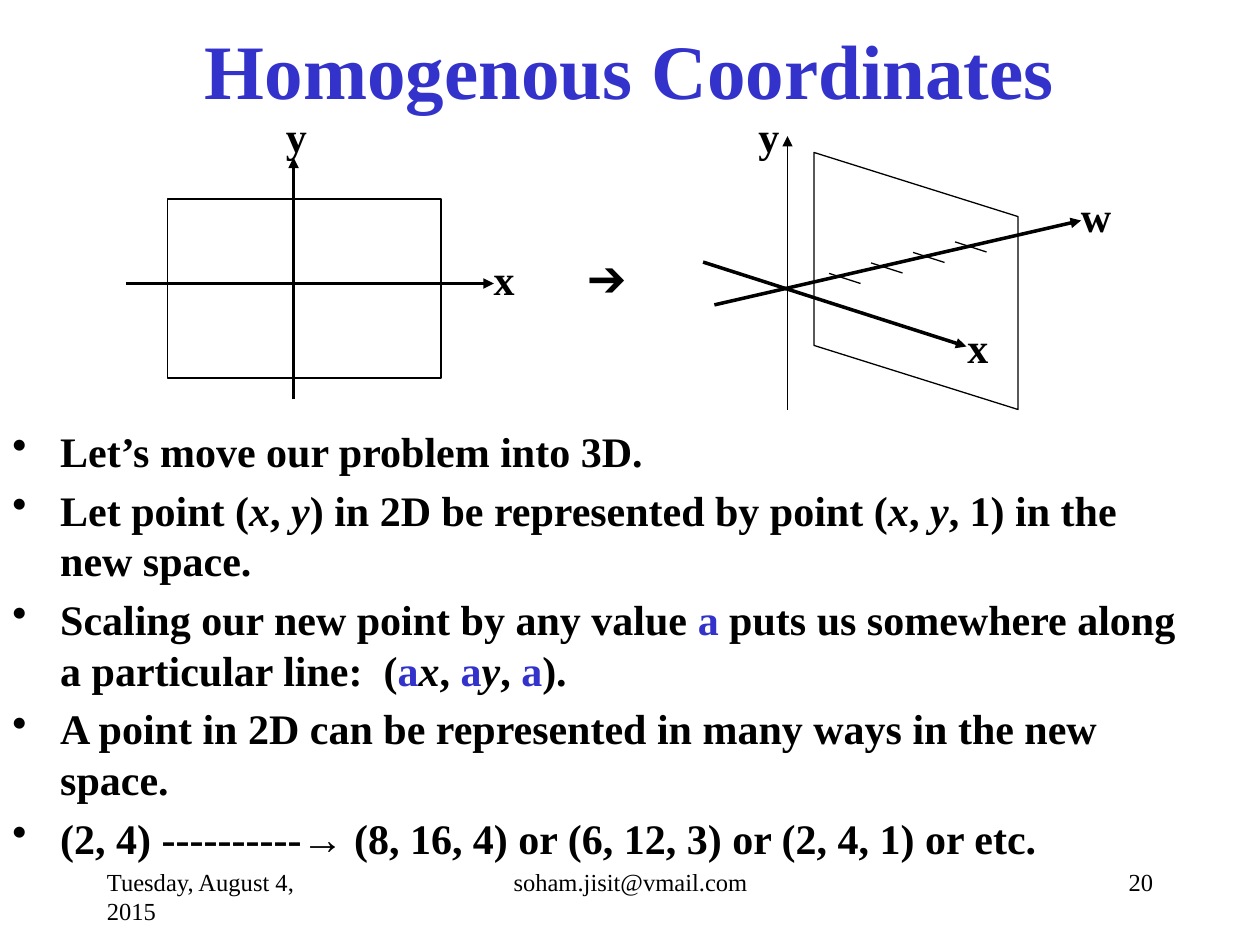
from lxml import etree
from pptx import Presentation
from pptx.dml.color import RGBColor
from pptx.enum.shapes import MSO_CONNECTOR, MSO_SHAPE
from pptx.enum.text import MSO_ANCHOR, PP_ALIGN
from pptx.oxml.ns import qn
from pptx.util import Inches, Pt

HUES = {"ink": "000000", "blue": "3333CC"}
FONT = "Times New Roman"

deck = Presentation()
deck.slide_width, deck.slide_height = Inches(10), Inches(7.5)
slide = deck.slides.add_slide(deck.slide_layouts[6])


def add_text(text, box, size, bold=True, hue="ink", align=PP_ALIGN.LEFT, wrap=True):
    """Add a text box; between bars, a is blue and other words are italic."""
    frame = slide.shapes.add_textbox(*[Inches(n) for n in box]).text_frame
    frame.word_wrap = wrap
    frame.text = text
    for para in frame.paragraphs:
        para.alignment = align
        parts = para.text.split("|")
        para.text = parts[0]
        for part in parts[1:]:
            para.add_run().text = part
        for i, run in enumerate(para.runs):
            mark = i % 2 == 1
            tint = "blue" if mark and run.text == "a" else hue
            run.font.name, run.font.size = FONT, Pt(size)
            run.font.bold = bold
            run.font.italic = mark and run.text != "a"
            run.font.color.rgb = RGBColor.from_string(HUES[tint])
    return frame


def add_line(x1, y1, x2, y2, width=0.75, arrow=False):
    line = slide.shapes.add_connector(
        MSO_CONNECTOR.STRAIGHT, Inches(x1), Inches(y1), Inches(x2), Inches(y2))
    line.line.width = Pt(width)
    line.line.color.rgb = RGBColor.from_string(HUES["ink"])
    if arrow:
        etree.SubElement(line.line._get_or_add_ln(), qn("a:tailEnd"), type="triangle")
    etree.SubElement(line._element.spPr, qn("a:effectLst"))


# Title
title = add_text("Homogenous Coordinates", (0.75, -0.08, 8.5, 1.25), 44,
                 hue="blue", align=PP_ALIGN.CENTER)
title.vertical_anchor = MSO_ANCHOR.MIDDLE

# Bullets
points = [
    "Let’s move our problem into 3D.",
    "Let point (|x|, |y|) in 2D be represented by point (|x|, |y|, 1) in the new space.",
    "Scaling our new point by any value |a| puts us somewhere along "
    "a particular line:  (|a||x|, |a||y|, |a|).",
    "A point in 2D can be represented in many ways in the new space.",
    "(2, 4) ----------→ (8, 16, 4) or (6, 12, 3) or (2, 4, 1) or etc.",
]
body = add_text("\n".join(points), (0, 3.33, 9.5, 3.92), 24)
for para in body.paragraphs:
    para.space_before = Pt(4.8)
    props = para._p.get_or_add_pPr()
    props.set("marL", str(Inches(0.38)))
    props.set("indent", str(Inches(-0.38)))
    etree.SubElement(props, qn("a:buChar"), char="•")

# Planes: flat on the left, tilted on the right
planes = [
    (MSO_SHAPE.RECTANGLE, (1.33, 1.58, 2.17, 1.42), 0),
    (MSO_SHAPE.PARALLELOGRAM, (6.25, 1.42, 2.04, 1.62), 270),
]
for kind, box, turn in planes:
    plane = slide.shapes.add_shape(kind, *[Inches(n) for n in box])
    plane.rotation = turn
    plane.shadow.inherit = False
    plane.fill.background()
    plane.line.width = Pt(0.75)
    plane.line.color.rgb = RGBColor.from_string(HUES["ink"])
    if kind == MSO_SHAPE.PARALLELOGRAM:
        plane.adjustments[0] = 0.314

# Axes
axes = [
    (1, 2.25, 3.92, 2.25, 2),
    (2.33, 3.17, 2.33, 1.25, 2),
    (6.25, 3.25, 6.25, 1.08, 0.75),
    (5.58, 2.08, 7.67, 2.75, 2),
    (5.67, 2.42, 8.58, 1.75, 2),
]
for axis in axes:
    add_line(*axis, arrow=True)

# Ticks along the w axis
for i in range(4):
    x, y = 6.58 + i / 3, 2.17 - i / 12
    add_line(x, y, x + 0.25, y + 0.08)

# Axis names and the arrow between the planes
names = [
    ("y", 2.17, 0.83, 0.37),
    ("y", 5.92, 0.83, 0.37),
    ("x", 3.82, 1.96, 0.37),
    ("x", 7.58, 2.5, 0.37),
    ("w", 8.48, 1.46, 0.44),
    ("➔", 4.57, 1.96, 0.56),
]
for name, x, y, wide in names:
    add_text(name, (x, y, wide, 0.5), 24, wrap=False)

# Footer
feet = [
    ("Tuesday, August 4, 2015", 0.75, 2.08, PP_ALIGN.LEFT),
    ("soham.jisit@vmail.com", 3.42, 3.17, PP_ALIGN.CENTER),
    ("20", 7.17, 2.08, PP_ALIGN.RIGHT),
]
for text, x, wide, align in feet:
    add_text(text, (x, 6.83, wide, 0.5), 14, bold=False, align=align)

deck.save("out.pptx")
